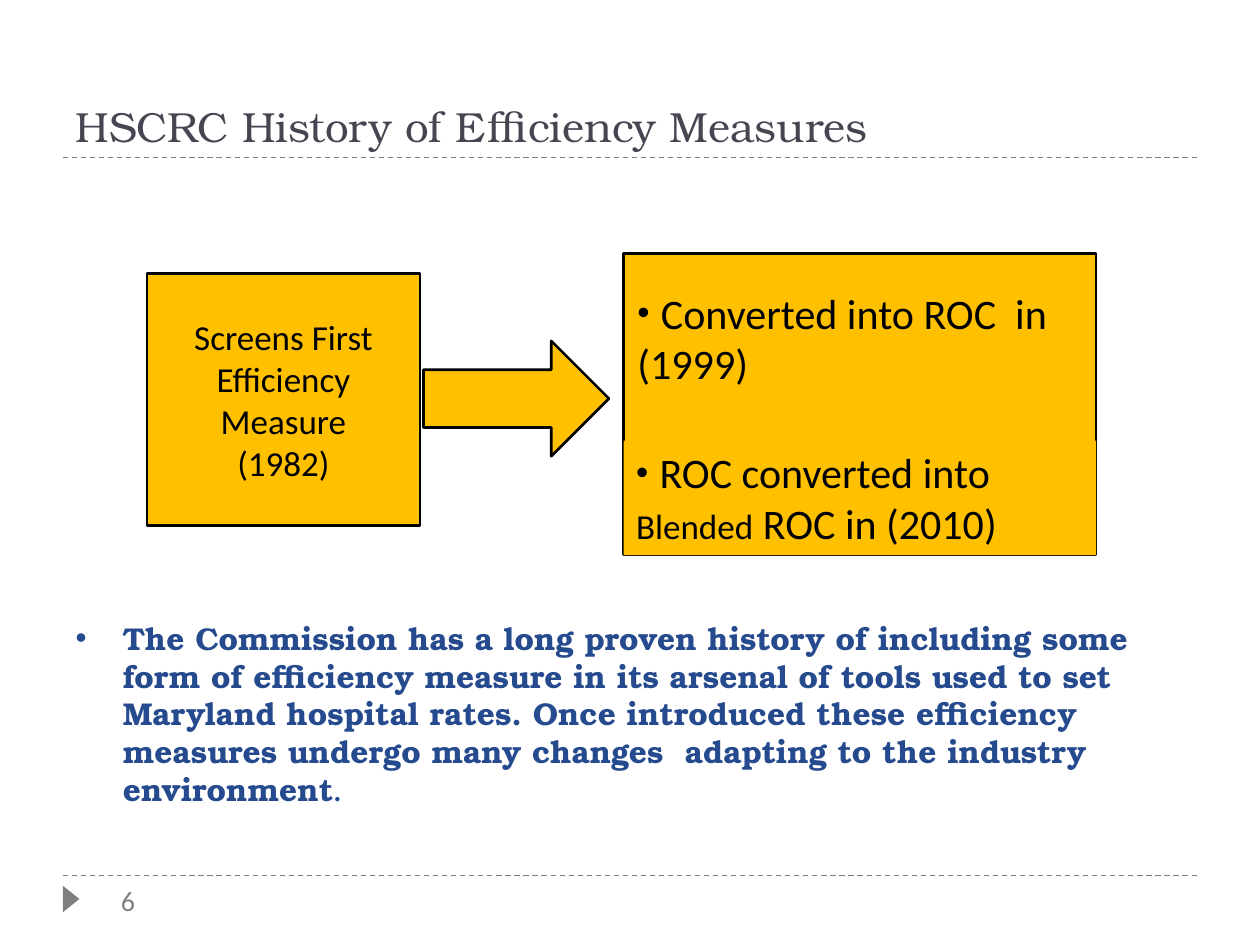
"""Builds the slide on the history of efficiency measures."""
from lxml.etree import SubElement
from pptx import Presentation
from pptx.dml.color import RGBColor
from pptx.enum.dml import MSO_LINE
from pptx.enum.shapes import MSO_CONNECTOR, MSO_SHAPE
from pptx.enum.text import MSO_ANCHOR, MSO_AUTO_SIZE, PP_ALIGN
from pptx.oxml.ns import qn
from pptx.util import Pt

COLORS = {"gold": "FFC000", "black": "000000", "gray": "7F7F7F",
          "number": "808080", "title": "464653", "blue": "254B8E"}
SANS, SERIF = "Calibri", "TeX Gyre Bonum"


def color(name):
    """Return the named colour."""
    return RGBColor.from_string(COLORS[name])


def place(sp, box):
    """Move a shape to a box given in points."""
    sp.left, sp.top, sp.width, sp.height = map(Pt, box)


def add_run(p, text, size, font, fill, bold=False):
    """Append one formatted run to a paragraph."""
    r = p.add_run()
    r.text = text
    r.font.size, r.font.name, r.font.bold = Pt(size), font, bold
    r.font.color.rgb = color(fill)


def add_bullet(p, indent=0):
    """Give a paragraph a round bullet with a hanging indent."""
    pPr = p._p.get_or_add_pPr()
    pPr.set("marL", str(Pt(indent)))
    pPr.set("indent", str(-Pt(indent)))
    SubElement(pPr, qn("a:buFont"), typeface="Arial")
    SubElement(pPr, qn("a:buChar"), char="•")


def set_frame(tf, anchor, wrap=True):
    """Set the anchor and wrapping of a text frame."""
    tf.auto_size = MSO_AUTO_SIZE.NONE
    tf.word_wrap, tf.vertical_anchor = wrap, anchor


def add_block(shapes, kind, box, fill="gold", outline=None):
    """Add a filled shape, outlined only if a line colour is named."""
    sp = shapes.add_shape(kind, *map(Pt, box))
    sp.shadow.inherit = False
    sp.fill.solid()
    sp.fill.fore_color.rgb = color(fill)
    if outline:
        sp.line.color.rgb = color(outline)
        sp.line.width = Pt(1.5)
    else:
        sp.line.fill.background()
    return sp


def add_rule(s, left, top, width):
    """Add a dashed horizontal rule."""
    line = s.shapes.add_connector(MSO_CONNECTOR.STRAIGHT, Pt(left), Pt(top),
                                  Pt(left + width), Pt(top))
    line.line.color.rgb = color("gray")
    line.line.width = Pt(0.75)
    line.line.dash_style = MSO_LINE.DASH
    SubElement(line._element.spPr, qn("a:effectLst"))


def add_footer(s, left, top, width):
    """Add the footer rule, marker and slide number."""
    add_rule(s, left, top, width)
    marker = add_block(s.shapes, MSO_SHAPE.ISOSCELES_TRIANGLE,
                       (left - 2.9, top + 8.6, 15.1, 9.4), "gray")
    marker.rotation = 90
    tf = s.shapes.add_textbox(Pt(left + 26), Pt(top + 0.7), Pt(34), Pt(26.6)).text_frame
    set_frame(tf, MSO_ANCHOR.TOP, wrap=False)
    add_run(tf.paragraphs[0], "6", 16, SANS, "number")


def add_title(s, box):
    """Fill the title placeholder and underline it."""
    sp = s.shapes.title
    place(sp, box)
    set_frame(sp.text_frame, MSO_ANCHOR.BOTTOM)
    p = sp.text_frame.paragraphs[0]
    p.alignment = PP_ALIGN.LEFT
    add_run(p, "HSCRC History of Efficiency Measures", 24, SERIF, "title")
    left, top, width, height = box
    add_rule(s, left, top + height, width)


def add_panel_item(shapes, box, runs):
    """Add a bulleted item, with runs given as text and size."""
    tf = add_block(shapes, MSO_SHAPE.RECTANGLE, box).text_frame
    set_frame(tf, MSO_ANCHOR.TOP)
    p = tf.paragraphs[0]
    p.alignment = PP_ALIGN.LEFT
    add_bullet(p)
    add_run(p, " ", 20, SERIF, "black")
    for text, size in runs:
        add_run(p, text, size, SANS, "black")


def add_diagram(s, left, top, width, height):
    """Add the first measure, the arrow and the panel of later measures."""
    shapes = s.shapes.add_group_shape().shapes
    panel_w = 270
    panel_x = left + width - panel_w
    add_block(shapes, MSO_SHAPE.RECTANGLE, (panel_x, top, panel_w, height), outline="black")
    add_panel_item(shapes, (panel_x + 0.8, top + 16, 259, 124),
                   [("Converted into ROC  in (1999)", 24)])
    add_panel_item(shapes, (panel_x, top + height - 65, panel_w, 65.5),
                   [("ROC converted into ", 24), ("Blended", 20), (" ROC in (2010)", 24)])

    first = add_block(shapes, MSO_SHAPE.RECTANGLE, (left, top + 11.5, 156, 144),
                      outline="black")
    set_frame(first.text_frame, MSO_ANCHOR.MIDDLE)
    lines = ["Screens First Efficiency Measure", "(1982)"]
    for i, text in enumerate(lines):
        p = first.text_frame.add_paragraph() if i else first.text_frame.paragraphs[0]
        p.alignment = PP_ALIGN.CENTER
        add_run(p, text, 20, SANS, "black")
    add_block(shapes, MSO_SHAPE.RIGHT_ARROW, (left + 158, top + 50, 106, 66),
              outline="black")


def add_body(s, box):
    """Fill the body placeholder with the closing statement."""
    sp = s.placeholders[1]
    place(sp, box)
    set_frame(sp.text_frame, MSO_ANCHOR.TOP)
    p = sp.text_frame.paragraphs[0]
    p.space_before = Pt(0)
    add_bullet(p, 27)
    add_run(p, "The Commission has a long proven history of including some form of "
            "efficiency measure in its arsenal of tools used to set Maryland hospital "
            "rates. Once introduced these efficiency measures undergo many changes  "
            "adapting to the industry environment", 18, SERIF, "blue", bold=True)
    add_run(p, ".", 14, SERIF, "blue", bold=True)


def main():
    """Build and save the presentation."""
    prs = Presentation()
    prs.slide_width, prs.slide_height = Pt(720), Pt(540)
    s = prs.slides.add_slide(prs.slide_layouts[1])
    add_footer(s, 36, 500.4, 648)
    add_title(s, (36, 12, 648, 78))
    add_diagram(s, 84, 144.8, 542.4, 172)
    add_body(s, (36, 350, 618, 130))
    prs.save("out.pptx")


if __name__ == "__main__":
    main()
